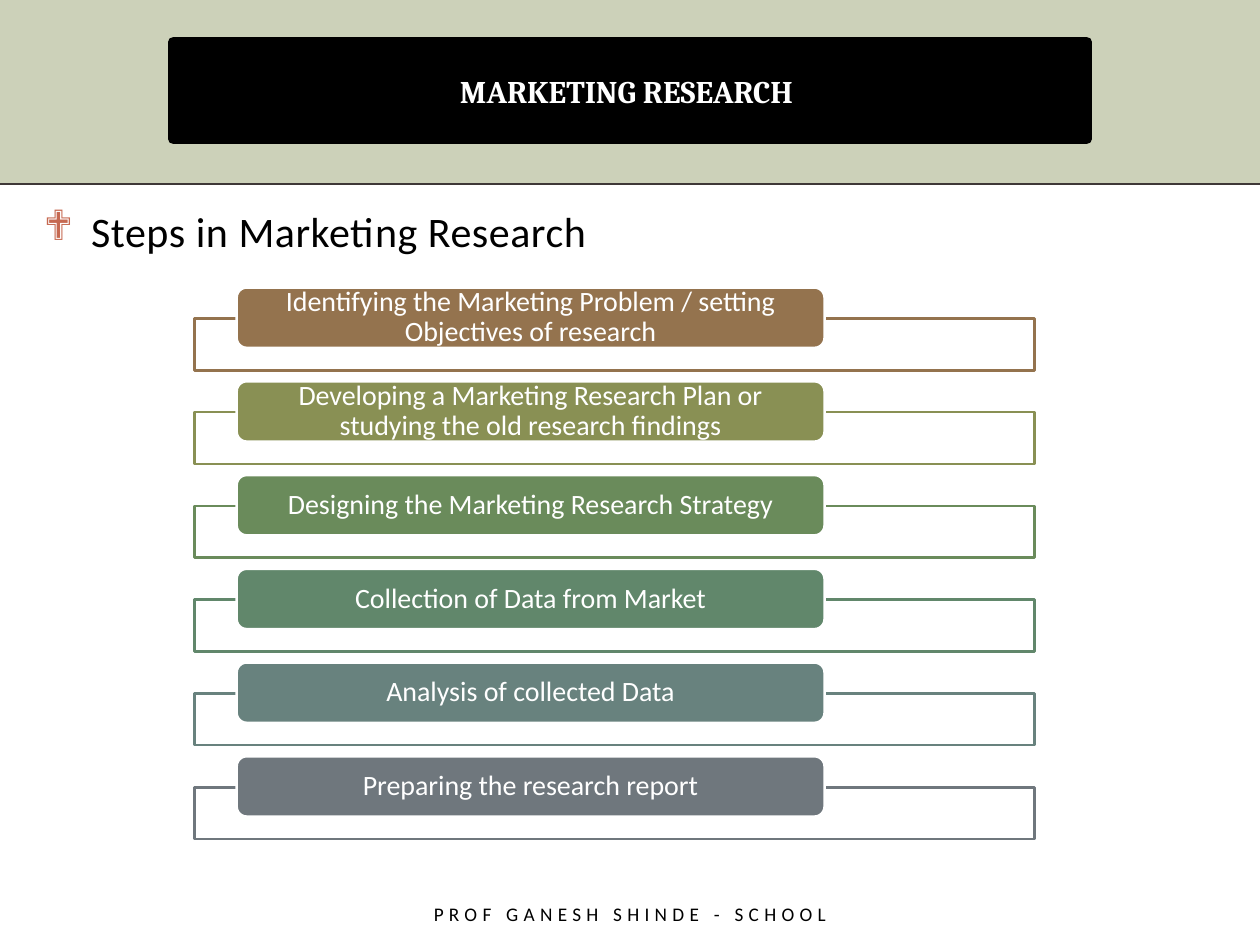
import pptx
import pptx.util
import pptx.dml.color
import pptx.enum.shapes
import pptx.enum.text
import pptx.oxml
import pptx.oxml.ns
from lxml import etree

Pt = pptx.util.Pt
RGBColor = pptx.dml.color.RGBColor
SHAPE = pptx.enum.shapes.MSO_SHAPE
CENTER = pptx.enum.text.PP_ALIGN.CENTER
MIDDLE = pptx.enum.text.MSO_ANCHOR.MIDDLE
qn = pptx.oxml.ns.qn

SAGE = RGBColor(0xCC, 0xD1, 0xB9)
WHITE = RGBColor(0xFF, 0xFF, 0xFF)
BLACK = RGBColor(0x00, 0x00, 0x00)
RULE_GREY = RGBColor(0x3E, 0x37, 0x37)
STEPS = [
    ("Identifying the Marketing Problem / setting Objectives of research", RGBColor(0x94, 0x73, 0x4E)),
    ("Developing a Marketing Research Plan or studying the old research findings", RGBColor(0x89, 0x90, 0x54)),
    ("Designing the Marketing Research Strategy", RGBColor(0x6A, 0x8B, 0x5B)),
    ("Collection of Data from Market", RGBColor(0x61, 0x87, 0x6B)),
    ("Analysis of collected Data", RGBColor(0x68, 0x82, 0x7E)),
    ("Preparing the research report", RGBColor(0x6F, 0x77, 0x7D)),
]
STEP_TOP = 164.3
STEP_PITCH = 53.57

deck = pptx.Presentation()
deck.slide_width, deck.slide_height = Pt(720), Pt(540)
page = deck.slides.add_slide(deck.slide_layouts[6])
page.background.fill.solid()
page.background.fill.fore_color.rgb = SAGE


def add_box(kind, left, top, width, height, fill, line=None, line_width=1.5):
    box = page.shapes.add_shape(kind, Pt(left), Pt(top), Pt(width), Pt(height))
    box.shadow.inherit = False
    box.fill.solid()
    box.fill.fore_color.rgb = fill
    if line is None:
        box.line.fill.background()
    else:
        box.line.color.rgb = line
        box.line.width = Pt(line_width)
    return box


def write(box, text, font, size, color, bold=False, spacing=0):
    """Put one styled paragraph in the box; spacing is between letters, in points."""
    box.text_frame.word_wrap = True
    box.text_frame.text = text
    para = box.text_frame.paragraphs[0]
    span = para.runs[0]
    span.font.name = font
    span.font.size = Pt(size)
    span.font.bold = bold
    span.font.color.rgb = color
    if spacing:
        span.font._element.set("spc", str(round(spacing * 100)))
    return para


# Page body and header rule
add_box(SHAPE.RECTANGLE, 0, 105, 720, 435, WHITE)
rule = page.shapes.add_connector(
    pptx.enum.shapes.MSO_CONNECTOR.STRAIGHT, 0, Pt(105), Pt(720), Pt(105))
rule.line.color.rgb = RULE_GREY
rule.line.width = Pt(1)
etree.SubElement(rule._element.spPr, qn("a:effectLst"))

# Heading with diamond bullet
heading = page.shapes.add_textbox(Pt(18), Pt(114), Pt(684), Pt(40))
para = write(heading, "Steps in Marketing Research", "Calibri", 24, BLACK, spacing=0.3)
para.space_before = Pt(6)
properties = para._p.get_or_add_pPr()
properties.set("marL", str(Pt(27)))
properties.set("indent", str(-Pt(27)))
bullet_color = etree.SubElement(properties, qn("a:buClr"))
etree.SubElement(bullet_color, qn("a:srgbClr"), val="C66951")
etree.SubElement(properties, qn("a:buFont"), typeface="Wingdings")
etree.SubElement(properties, qn("a:buChar"), char="❖")

# Title
title = add_box(SHAPE.RECTANGLE, 99, 24, 522, 55.5, BLACK, BLACK, 6)
title.text_frame.vertical_anchor = MIDDLE
para = write(title, "MARKETING RESEARCH ", "Cambria", 18, WHITE, bold=True)
para.alignment = CENTER
para.space_before = Pt(4)

# Footer
footer = page.shapes.add_textbox(Pt(114), Pt(510.5), Pt(492), Pt(23))
footer.text_frame.vertical_anchor = MIDDLE
para = write(footer, "PROF GANESH SHINDE - SCHOOL", "Calibri", 11, BLACK, spacing=3)
para.alignment = CENTER

# Steps: an outlined bar with a coloured label over its top edge
for index, (text, color) in enumerate(STEPS):
    top = round(STEP_TOP + index * STEP_PITCH, 2)
    bar = add_box(SHAPE.RECTANGLE, 111.3, top + 17.7, 480, 29.6, WHITE, color)
    fill_color = bar.fill._xPr.find(qn("a:solidFill"))[0]
    etree.SubElement(fill_color, qn("a:alpha"), val="90000")

    label = add_box(SHAPE.ROUNDED_RECTANGLE, 135.2, top, 336, 34.5, color, WHITE)
    frame = label.text_frame
    frame.margin_left = frame.margin_right = Pt(13)
    frame.margin_top = frame.margin_bottom = 0
    frame.vertical_anchor = MIDDLE
    para = write(label, text, "Calibri", 16, WHITE)
    para.alignment = CENTER
    para.line_spacing = 0.9

deck.save("out.pptx")
